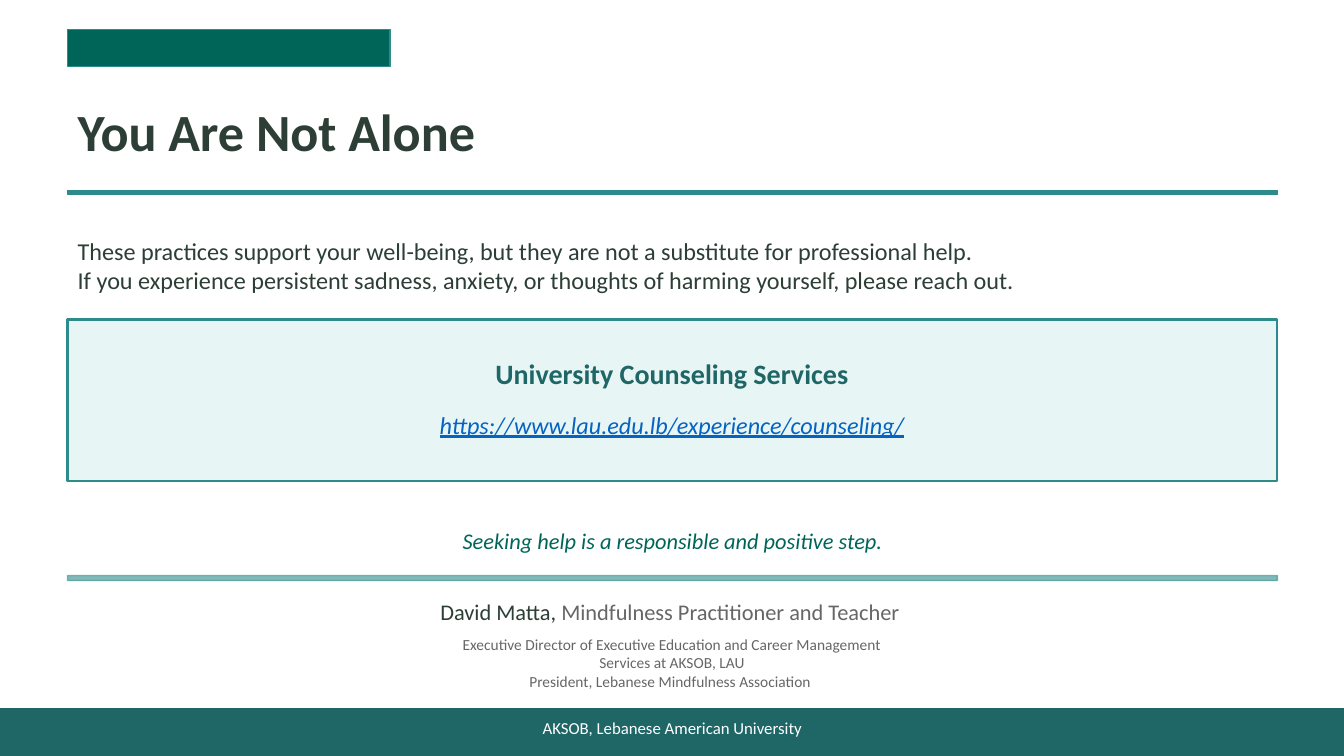
import pptx
import pptx.util
import pptx.dml.color
import pptx.enum.shapes
import pptx.enum.text
import pptx.oxml
import pptx.oxml.ns

Inches, Pt = pptx.util.Inches, pptx.util.Pt
RGBColor = pptx.dml.color.RGBColor
ALIGN = pptx.enum.text.PP_ALIGN
ANCHOR = pptx.enum.text.MSO_ANCHOR

WHITE = RGBColor(0xFF, 0xFF, 0xFF)
GREEN = RGBColor(0x00, 0x65, 0x59)
TEAL = RGBColor(0x2E, 0x8B, 0x8B)
DEEP = RGBColor(0x1F, 0x66, 0x66)
PALE = RGBColor(0xE8, 0xF5, 0xF5)
INK = RGBColor(0x2C, 0x3E, 0x35)
GRAY = RGBColor(0x66, 0x66, 0x66)
BLUE = RGBColor(0x05, 0x63, 0xC1)

WIDE, HIGH = 13.33, 7.5
EDGE, SPAN = 0.67, 12

# place, fill, line, line width, opacity in percent
BARS = [
    ((EDGE, 0.29, 3.2, 0.37), GREEN, TEAL, 1, 100),
    ((EDGE, 1.89, SPAN, 0.04), TEAL, TEAL, 1, 100),
    ((EDGE, 3.17, SPAN, 1.6), PALE, TEAL, 1.5, 100),
    ((EDGE, 5.71, SPAN, 0.05), TEAL, TEAL, 1, 60),
    ((0, 7.03, WIDE, 0.47), DEEP, DEEP, 1, 100),
]
TITLE = "You Are Not Alone"
BODY = [
    "These practices support your well-being, but they are not a substitute for professional help.",
    "If you experience persistent sadness, anxiety, or thoughts of harming yourself, please reach out.",
]
# place, paragraphs (plain text or a list of coloured runs), format
NOTES = [
    ((0.93, 3.44, 11.47, 0.53), ["University Counseling Services"],
     dict(size=20, color=DEEP, bold=True)),
    ((0.93, 3.97, 11.47, 0.48), ["https://www.lau.edu.lb/experience/counseling/"],
     dict(size=17.3, color=BLUE, slant=True, under=True)),
    ((EDGE, 5.13, SPAN, 0.47), ["Seeking help is a responsible and positive step."],
     dict(size=16, color=GREEN, slant=True)),
    ((EDGE, 5.87, SPAN, 0.4),
     [[("David Matta, ", INK), ("Mindfulness Practitioner and Teacher ", GRAY)]],
     dict(size=16)),
    ((4.36, 6.25, 4.61, 0.66),
     ["Executive Director of Executive Education and Career Management Services at AKSOB, LAU",
      "President, Lebanese Mindfulness Association "],
     dict(size=11, color=GRAY, anchor=ANCHOR.TOP)),
    ((1.97, 7.07, 9.4, 0.3), ["AKSOB, Lebanese American University"],
     dict(size=12, color=WHITE)),
]


def write(shape, lines, size=16, color=INK, bold=False, slant=False, under=False,
          align=ALIGN.CENTER, anchor=ANCHOR.MIDDLE):
    frame = shape.text_frame
    frame.word_wrap = True
    frame.auto_size = pptx.enum.text.MSO_AUTO_SIZE.NONE
    frame.vertical_anchor = anchor
    for i, line in enumerate(lines):
        para = frame.add_paragraph() if i else frame.paragraphs[0]
        para.alignment = align
        para.space_before = Pt(0)
        for text, tint in [(line, color)] if isinstance(line, str) else line:
            run = para.add_run()
            run.text = text
            font = run.font
            font.name, font.size = "Calibri", Pt(size)
            font.bold, font.italic, font.underline = bold, slant, under
            font.color.rgb = tint


def place(shape, spot):
    shape.left, shape.top, shape.width, shape.height = map(Inches, spot)


def fade(shape, part):
    """Make every solid colour in the shape partly transparent."""
    for tint in shape.fill._xPr.iter(pptx.oxml.ns.qn("a:srgbClr")):
        tint.append(pptx.oxml.parse_xml(
            f'<a:alpha {pptx.oxml.ns.nsdecls("a")} val="{part * 1000}"/>'))


def draw(slide, spot, fill, edge, width, part):
    bar = slide.shapes.add_shape(pptx.enum.shapes.MSO_SHAPE.RECTANGLE, *map(Inches, spot))
    bar.shadow.inherit = False
    bar.fill.solid()
    bar.fill.fore_color.rgb = fill
    bar.line.color.rgb = edge
    bar.line.width = Pt(width)
    if part < 100:
        fade(bar, part)


def main():
    deck = pptx.Presentation()
    deck.slide_width, deck.slide_height = Inches(WIDE), Inches(HIGH)
    slide = deck.slides.add_slide(deck.slide_layouts[1])

    for bar in BARS:
        draw(slide, *bar)

    title, body = slide.placeholders
    place(title, (EDGE, 0.83, SPAN, 0.93))
    write(title, [TITLE], size=37.3, bold=True, align=ALIGN.LEFT)
    place(body, (EDGE, 2.07, SPAN, 1.13))
    write(body, BODY, size=17.3, align=ALIGN.LEFT)
    for para in body.text_frame.paragraphs:
        props = para._p.get_or_add_pPr()
        props.set("marL", "0")
        props.set("indent", "0")
        props.append(pptx.oxml.parse_xml(f'<a:buNone {pptx.oxml.ns.nsdecls("a")}/>'))

    for spot, lines, form in NOTES:
        write(slide.shapes.add_textbox(*map(Inches, spot)), lines, **form)

    deck.save("out.pptx")


if __name__ == "__main__":
    main()
